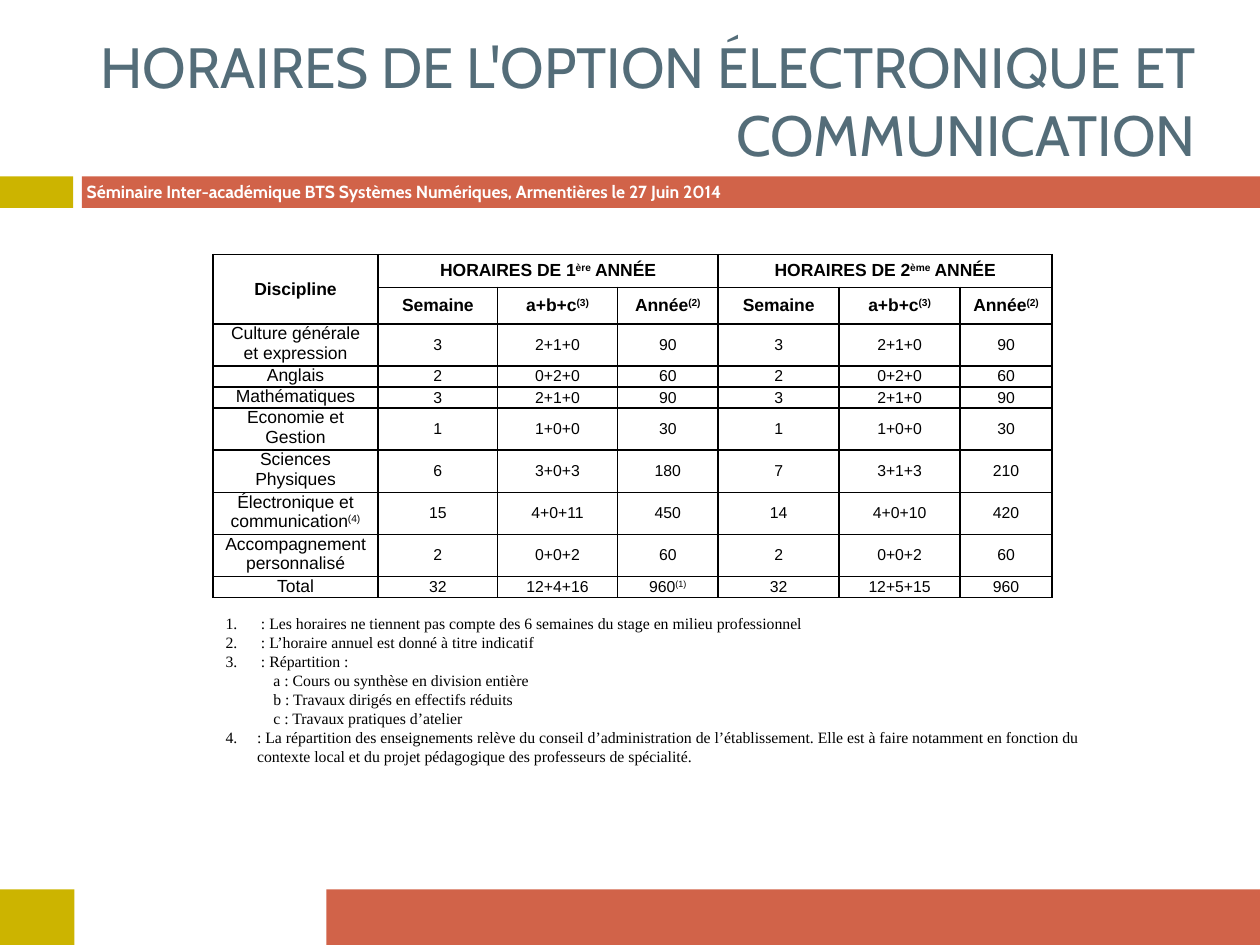
from lxml.etree import SubElement
from pptx import Presentation
from pptx.dml.color import RGBColor
from pptx.enum.shapes import MSO_SHAPE
from pptx.enum.text import MSO_ANCHOR, MSO_AUTO_SIZE, PP_ALIGN
from pptx.oxml.ns import qn
from pptx.util import Inches, Pt

GOLD = RGBColor(0xCC, 0xB4, 0x00)
RUST = RGBColor(0xD1, 0x63, 0x49)
SLATE = RGBColor(0x54, 0x6D, 0x79)
WHITE = RGBColor(0xFF, 0xFF, 0xFF)
BLACK = RGBColor(0x00, 0x00, 0x00)

UNIT = Inches(0.1)

COLS = [13.1, 9.5, 9.5, 8, 9.6, 9.6, 7.3]
ROWS = [2.6, 2.9, 3.2, 1.6, 1.6, 3.2, 3.2, 3.2, 3.2, 1.6]
YEARS = ["HORAIRES DE 1^ère^ ANNÉE", "HORAIRES DE 2^ème^ ANNÉE"]
HEADS = ["Semaine", "a+b+c^(3)", "Année^(2)"]
HOURS = [
    ("Culture générale et expression", "3 2+1+0 90 3 2+1+0 90"),
    ("Anglais", "2 0+2+0 60 2 0+2+0 60"),
    ("Mathématiques", "3 2+1+0 90 3 2+1+0 90"),
    ("Economie et Gestion", "1 1+0+0 30 1 1+0+0 30"),
    ("Sciences Physiques", "6 3+0+3 180 7 3+1+3 210"),
    ("Électronique et communication^(4)", "15 4+0+11 450 14 4+0+10 420"),
    ("Accompagnement personnalisé", "2 0+0+2 60 2 0+0+2 60"),
    ("Total", "32 12+4+16 960^(1) 32 12+5+15 960"),
]
NOTES = [
    (1, " : Les horaires ne tiennent pas compte des 6 semaines du stage en milieu professionnel"),
    (1, " : L’horaire annuel est donné à titre indicatif"),
    (1, " : Répartition :"),
    (None, "a : Cours ou synthèse en division entière"),
    (None, "b : Travaux dirigés en effectifs réduits"),
    (None, "c : Travaux pratiques d’atelier"),
    (4, ": La répartition des enseignements relève du conseil d’administration de "
        "l’établissement. Elle est à faire notamment en fonction du contexte local "
        "et du projet pédagogique des professeurs de spécialité."),
]


def grid(*cells):
    """Turn grid units into slide lengths."""
    return [round(cell * UNIT) for cell in cells]


def place(shape, box):
    """Move a shape into a box."""
    shape.left, shape.top, shape.width, shape.height = box


def write(para, text, face, size, color, bold=False):
    """Add runs to a paragraph, raising every second part split by ^."""
    for rank, part in enumerate(text.split("^")):
        if not part:
            continue
        run = para.add_run()
        run.text = part
        font = run.font
        font.name, font.size, font.bold = face, Pt(size), bold
        font.color.rgb = color
        if rank % 2:
            run._r.get_or_add_rPr().set("baseline", "30000")


def draw_band(slide, box, end, start):
    """Draw a gold block up to one share of the box and a rust bar from another."""
    left, top, width, height = box
    for color, low, high in ((GOLD, 0, end), (RUST, start, 1)):
        bar = slide.shapes.add_shape(
            MSO_SHAPE.RECTANGLE, left + round(low * width), top,
            round((high - low) * width), height)
        bar.shadow.inherit = False
        bar.fill.solid()
        bar.fill.fore_color.rgb = color
        bar.line.fill.background()


def add_event(slide, box):
    """Write the event line over the upper band."""
    frame = slide.shapes.add_textbox(*box).text_frame
    frame.word_wrap = True
    write(frame.paragraphs[0],
          "Séminaire Inter-académique BTS Systèmes Numériques, Armentières le 27 Juin 2014",
          "Cabin", 10, WHITE, True)


def fill_title(slide, box):
    """Fill the title placeholder."""
    title = slide.shapes.title
    place(title, box)
    frame = title.text_frame
    frame.auto_size = MSO_AUTO_SIZE.NONE
    frame.vertical_anchor = MSO_ANCHOR.MIDDLE
    para = frame.paragraphs[0]
    para.alignment = PP_ALIGN.RIGHT
    write(para, "HORAIRES DE L'OPTION ÉLECTRONIQUE ET COMMUNICATION", "Cabin", 32.4, SLATE)


def frame_cell(cell):
    """Clear the fill of a cell and rule its four sides."""
    props = cell._tc.get_or_add_tcPr()
    for side in ("lnL", "lnR", "lnT", "lnB"):
        line = SubElement(props, qn(f"a:{side}"), w=str(Pt(1)))
        SubElement(SubElement(line, qn("a:solidFill")), qn("a:srgbClr"), val=str(BLACK))
    cell.fill.background()


def set_cell(cell, text, size, bold, anchor=MSO_ANCHOR.MIDDLE):
    """Write centred text in a cell."""
    cell.vertical_anchor = anchor
    para = cell.text_frame.paragraphs[0]
    para.alignment = PP_ALIGN.CENTER
    write(para, text, "Arial", size, BLACK, bold)


def add_hours(slide, box):
    """Build the table of hours by subject and year."""
    table = slide.shapes.add_table(len(ROWS), len(COLS), *box).table
    table.first_row = table.horz_banding = False
    for col, width in zip(table.columns, grid(*COLS)):
        col.width = width
    for row, height in zip(table.rows, grid(*ROWS)):
        row.height = height
    for cell in table.iter_cells():
        cell.margin_left = cell.margin_right = Inches(0.07)
        cell.margin_top = cell.margin_bottom = 0
        cell.text_frame.paragraphs[0].font.size = Pt(9)
        frame_cell(cell)

    table.cell(0, 0).merge(table.cell(1, 0))
    set_cell(table.cell(0, 0), "Discipline", 10, True)
    for year, text in enumerate(YEARS):
        first = 1 + year * len(HEADS)
        table.cell(0, first).merge(table.cell(0, first + len(HEADS) - 1))
        set_cell(table.cell(0, first), text, 10, True)
        for step, head in enumerate(HEADS):
            set_cell(table.cell(1, first + step), head, 10, True)
    for row, (topic, hours) in enumerate(HOURS, 2):
        set_cell(table.cell(row, 0), topic, 10, False, MSO_ANCHOR.TOP)
        for col, value in enumerate(hours.split(), 1):
            set_cell(table.cell(row, col), value, 9, False)


def fill_notes(slide, box):
    """Fill the body placeholder with the numbered notes."""
    body = slide.placeholders[1]
    place(body, box)
    frame = body.text_frame
    frame.auto_size = MSO_AUTO_SIZE.NONE
    frame.vertical_anchor = MSO_ANCHOR.TOP
    frame.margin_top = Inches(0.1)
    for rank, (start, text) in enumerate(NOTES):
        para = frame.add_paragraph() if rank else frame.paragraphs[0]
        para.space_before = Pt(0)
        props = para._p.get_or_add_pPr()
        if start:
            props.set("marL", str(Inches(0.25)))
            props.set("indent", str(-Inches(0.25)))
            SubElement(props, qn("a:buFont"), typeface="+mj-lt")
            SubElement(props, qn("a:buAutoNum"), type="arabicPeriod", startAt=str(start))
        else:
            props.set("marL", str(Inches(0.38)))
            props.set("indent", "0")
            SubElement(props, qn("a:buNone"))
        write(para, text, "Times New Roman", 9, BLACK)


def main():
    """Build and save the slide."""
    deck = Presentation()
    deck.slide_width, deck.slide_height = grid(100, 75)
    slide = deck.slides.add_slide(deck.slide_layouts[1])
    draw_band(slide, grid(0, 14, 100, 2.5), 0.058, 0.065)
    draw_band(slide, grid(0, 70.6, 100, 4.4), 0.059, 0.259)
    add_event(slide, grid(5.9, 13.9, 60.6, 4.4))
    fill_title(slide, grid(6.7, 2.5, 89.2, 10.8))
    add_hours(slide, grid(16.9, 20.2, sum(COLS), sum(ROWS)))
    fill_notes(slide, grid(16.9, 47.7, 74, 17.2))
    deck.save("out.pptx")


if __name__ == "__main__":
    main()
